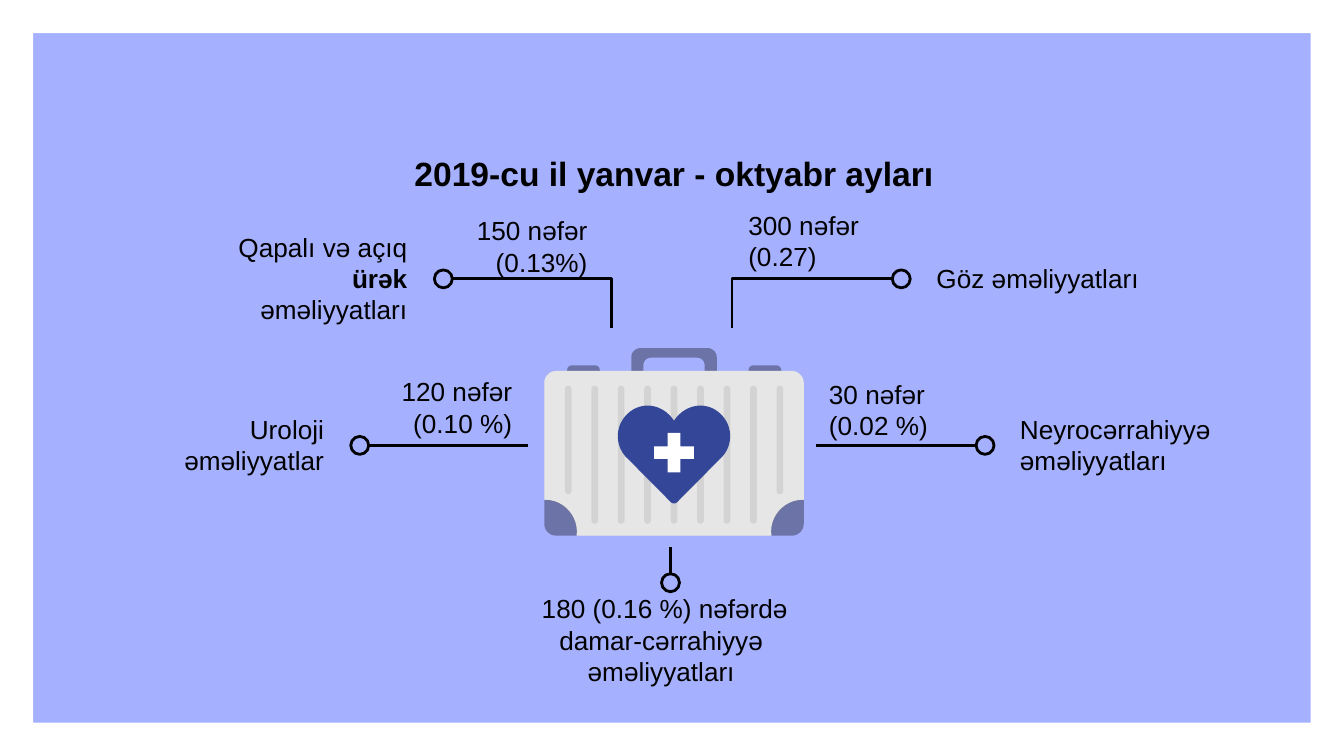
import pptx
import pptx.dml.color
import pptx.enum.shapes
import pptx.enum.text
import pptx.oxml.ns
import pptx.util
from lxml import etree

Pt = pptx.util.Pt
RGB = pptx.dml.color.RGBColor.from_string
Kind = pptx.enum.shapes.MSO_SHAPE
Align = pptx.enum.text.PP_ALIGN
qn = pptx.oxml.ns.qn

hues = {"back": "A5B0FE", "white": "FFFFFF", "ink": "000000",
        "shell": "D1D1D1", "heart": "344698"}
stroke = 1.5
mid = 361.1  # axis of the suitcase

deck = pptx.Presentation()
deck.slide_width, deck.slide_height = Pt(720), Pt(405)
slide = deck.slides.add_slide(deck.slide_layouts[6])
slide.background.fill.solid()
slide.background.fill.fore_color.rgb = RGB(hues["back"])
shapes = slide.shapes


def bend(steps):
    """Turn points and cubic curves (six numbers) into a list of points."""
    dots = []
    for step in steps:
        if len(step) == 2:
            dots.append(step)
            continue
        knots = [dots[-1], step[:2], step[2:4], step[4:]]
        for n in range(1, 13):
            t = n / 12
            parts = ((1 - t) ** 3, 3 * t * (1 - t) ** 2, 3 * t * t * (1 - t), t ** 3)
            dots.append(tuple(sum(w * k[i] for w, k in zip(parts, knots)) for i in (0, 1)))
    return dots


def paint(shape, hue=None, alpha=100):
    """Fill without an outline, or outline in ink when no hue is given."""
    shape.shadow.inherit = False
    if hue is None:
        shape.fill.background()
        shape.line.color.rgb = RGB(hues["ink"])
        shape.line.width = Pt(stroke)
        return
    shape.fill.solid()
    shape.fill.fore_color.rgb = RGB(hues[hue])
    shape.line.fill.background()
    if alpha < 100:
        tint = shape.fill._xPr.find(qn("a:solidFill"))[0]
        etree.SubElement(tint, qn("a:alpha")).set("val", str(alpha * 1000))


frame = shapes.add_shape(Kind.FRAME, 0, 0, Pt(720), Pt(405))
frame.adjustments[0] = 0.044
paint(frame, "white")

# Left halves of the symmetric outlines, from the top of the axis down
grip = bend([(mid, 186.5), (343.4, 186.5), (340.6, 186.5, 338.2, 188.6, 338.2, 191.5),
             (338.2, 206), (338.2, 208.8, 340.6, 211, 343.4, 211), (mid, 211)])
gap = bend([(mid, 191.7), (348.5, 191.7), (346.4, 191.7, 344.7, 193.4, 344.7, 195.8),
            (344.7, 206.6), (344.7, 208.8, 346.4, 210.2, 348.5, 210.2), (mid, 210.2)])
shell = bend([(mid, 198.7), (298.1, 198.7), (294.5, 198.7, 291.6, 201.6, 291.6, 205.2),
              (291.6, 267.8), (292.3, 267.8), (302.4, 267.8, 310.3, 277.2, 308.9, 287),
              (mid, 287)])
heart = bend([(mid, 225.4), (357.8, 220.3, 352.4, 217.3, 347, 217.3),
              (343.4, 217.3, 339.8, 218.6, 337, 221), (329, 227.5, 329, 239.8, 337, 246.4),
              (359.3, 268.9), (359.8, 269.4, 360.4, 269.7, mid, 269.7)])
grip, gap, shell, heart = [
    half + [(2 * mid - x, y) for x, y in reversed(half)]
    for half in (grip, gap, shell, heart)]
left = bend([(292.3, 267.8), (291.6, 267.8), (291.6, 280.6),
             (291.6, 284.2, 294.5, 287, 298.1, 287), (308.9, 287),
             (310.3, 277.2, 302.4, 267.8, 292.3, 267.8)])
right = [(2 * mid - x, y) for x, y in left]

# Suitcase from back to front: outlines are lists, preset shapes are tuples
case = [([grip, gap], "ink", 34)]
case += [((Kind.ROUNDED_RECTANGLE, 0.5, x, 195.7, 17.6, 5.2), "ink", 34)
         for x in (303.8, 401)]
case += [([shell], "shell", 100), ([shell], "white", 46),
         ([left], "ink", 34), ([right], "ink", 34)]
for n in range(9):
    tall = 58.2 if n in (0, 8) else 74
    x = mid + (n - 4) * 14.17 - 1.8
    case.append(((Kind.ROUNDED_RECTANGLE, 0.5, x, 206.6, 3.6, tall), "ink", 8))
case += [([heart], "heart", 100),
         ((Kind.CROSS, 0.34, mid - 10.6, 231.9, 21.2, 21.2), "white", 100)]
for form, hue, alpha in case:
    if isinstance(form, tuple):
        kind, adjust, *box = form
        part = shapes.add_shape(kind, *map(Pt, box))
        part.adjustments[0] = adjust
    else:
        loops = [[(Pt(x), Pt(y)) for x, y in loop] for loop in form]
        pen = shapes.build_freeform(*loops[0][0])
        pen.add_line_segments(loops[0][1:], close=True)
        for loop in loops[1:]:
            pen.move_to(*loop[0])
            pen.add_line_segments(loop[1:], close=True)
        part = pen.convert_to_shape()
    paint(part, hue, alpha)

# Leader lines and their end rings
for start, turn in ((478.1, 392.2), (242.2, 327.6)):
    pen = shapes.build_freeform(Pt(start), Pt(149.4))
    pen.add_line_segments([(Pt(turn), Pt(149.4)), (Pt(turn), Pt(175.7))], close=False)
    paint(pen.convert_to_shape())
for ends in ((522.9, 238.6, 437, 238.6), (197.4, 238.6, 283, 238.6),
             (359.2, 307.4, 359.2, 293)):
    wire = shapes.add_connector(pptx.enum.shapes.MSO_CONNECTOR.STRAIGHT, *map(Pt, ends))
    wire.line.color.rgb = RGB(hues["ink"])
    wire.line.width = Pt(stroke)
    etree.SubElement(wire._element.spPr, qn("a:effectLst"))
for x, y in ((527.7, 238.6), (482.8, 149.4), (237.5, 149.4), (192.7, 238.6), (359.2, 312.2)):
    paint(shapes.add_shape(Kind.OVAL, Pt(x - 4.8), Pt(y - 4.8), Pt(9.6), Pt(9.6)))

# Each label: box, alignment, runs; every second run is bold
labels = [
    ((57.6, 79.9, 607, 25.2), Align.CENTER, ["", "2019-cu il yanvar - oktyabr ayları"]),
    ((226.8, 118.8, 95, 25.9), Align.RIGHT, ["150 nəfər (0.13%)"]),
    ((101.5, 123.8, 123.8, 50.4), Align.RIGHT, ["Qapalı və açıq ", "ürək ", "əməliyyatları"]),
    ((269.3, 317.5, 169.9, 50.4), Align.CENTER,
     [" 180 (0.16 %) nəfərdə damar-cərrahiyyə əməliyyatları"]),
    ((56.9, 213.1, 123.8, 50.4), Align.RIGHT, ["Uroloji əməliyyatlar"]),
    ((186.5, 205.2, 95, 25.9), Align.RIGHT, ["120 nəfər (0.10 %)"]),
    ((393.8, 115.9, 95, 25.9), Align.LEFT, ["300 nəfər (0.27)"]),
    ((494.6, 123.8, 123.8, 50.4), Align.LEFT, ["Göz əməliyyatları"]),
    ((539.3, 213.1, 123.8, 50.4), Align.LEFT, ["Neyrocərrahiyyə əməliyyatları"]),
    ((437, 206.6, 95, 25.9), Align.LEFT, ["30 nəfər (0.02 %)"]),
]
setup = {"word_wrap": True, "vertical_anchor": pptx.enum.text.MSO_ANCHOR.MIDDLE,
         "margin_left": Pt(7.2), "margin_right": Pt(7.2),
         "margin_top": Pt(7.2), "margin_bottom": Pt(7.2)}
for box, align, runs in labels:
    text = shapes.add_textbox(*map(Pt, box)).text_frame
    for key, value in setup.items():
        setattr(text, key, value)
    line = text.paragraphs[0]
    line.alignment = align
    for n, words in enumerate(runs):
        if not words:
            continue
        run = line.add_run()
        run.text = words
        style = {"name": "Arial", "size": Pt(14 if runs[0] else 18), "bold": n % 2 == 1}
        for key, value in style.items():
            setattr(run.font, key, value)
        run.font.color.rgb = RGB(hues["ink"])

deck.save("out.pptx")
